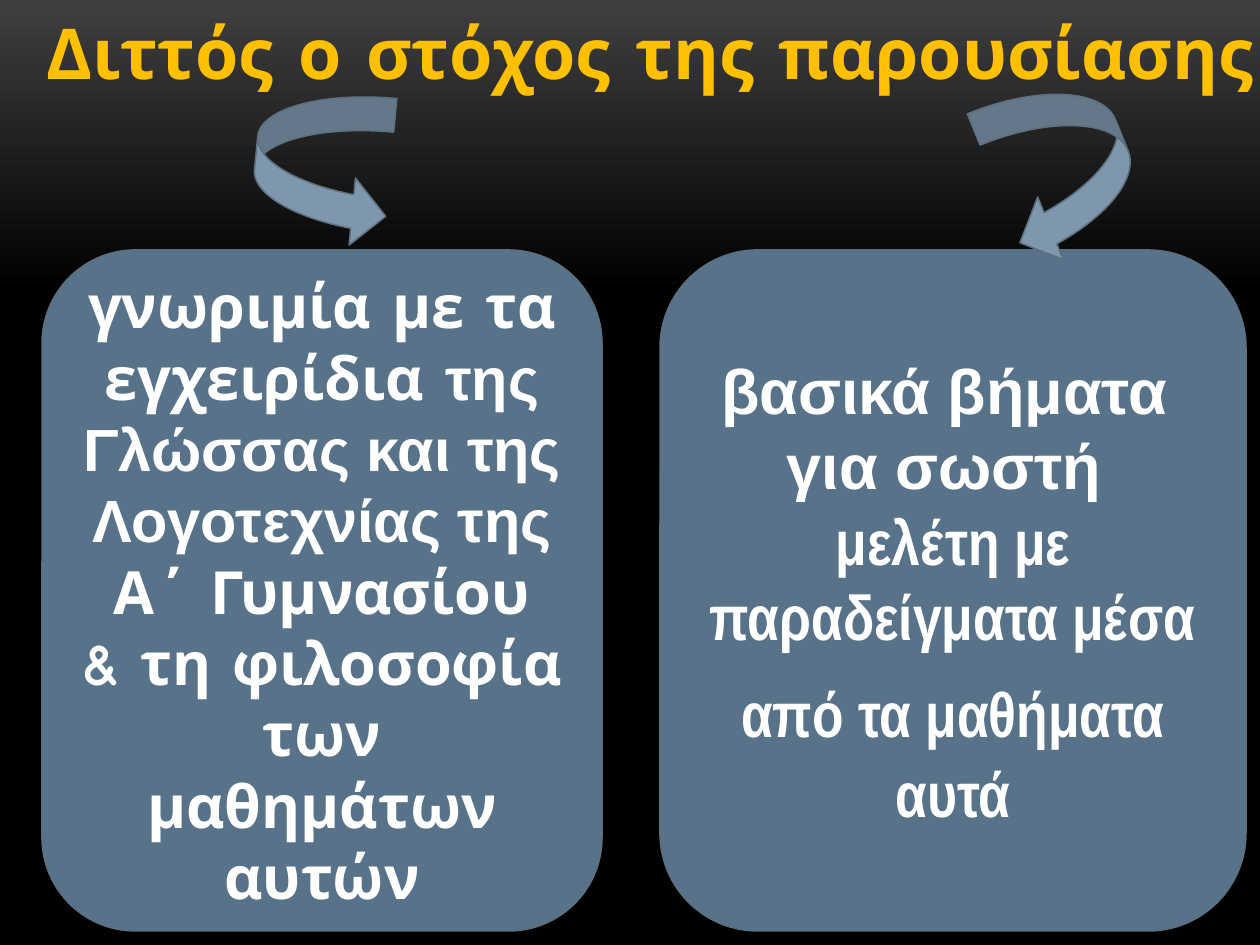
from dataclasses import dataclass

from pptx import Presentation
from pptx.dml.color import RGBColor
from pptx.enum.shapes import MSO_SHAPE
from pptx.enum.text import MSO_ANCHOR, MSO_AUTO_SIZE, PP_ALIGN
from pptx.util import Emu, Pt

EMU_PER_PX = 914400 / 126


@dataclass(frozen=True)
class Theme:
    title: str = "FFC000"
    text: str = "FFFFFF"
    card: str = "577289"
    arrow: str = "7E97AD"
    outline: str = "5D7080"
    glow: str = "3F3F3F"
    backdrop: str = "000000"
    heading_font: str = "Comic Neue"
    body_font: str = "Arial"
    narrow_font: str = "Arial Narrow"
    title_size: int = 40
    textbooks_size: int = 34
    study_size: int = 36
    gap_size: int = 48
    outline_width: float = 0.85


THEME = Theme()

TITLE = "Διττός ο στόχος της παρουσίασης"
TITLE_BOX = (20, 3, 1260, 107)

# Each paragraph is a list of (text, font, size) runs.
TEXTBOOKS_GOAL = [
    [("γνωριμία με τα εγχειρίδια ", THEME.heading_font, THEME.textbooks_size),
     ("της Γλώσσας και της Λογοτεχνίας της", THEME.body_font, THEME.textbooks_size),
     (" Α΄ Γυμνασίου", THEME.heading_font, THEME.textbooks_size)],
    [("& τη φιλοσοφία των μαθημάτων αυτών", THEME.heading_font, THEME.textbooks_size)],
]
STUDY_GOAL = [
    [("βασικά βήματα  για σωστή ", THEME.body_font, THEME.study_size),
     (" μελέτη με παραδείγματα μέσα από τα μαθήματα", THEME.narrow_font, THEME.study_size),
     (" ", THEME.narrow_font, THEME.gap_size),
     ("αυτά", THEME.narrow_font, THEME.study_size)],
]

CARD_TOP, CARD_HEIGHT = 250, 681
TEXTBOOKS_CARD = (42, CARD_TOP, 560, CARD_HEIGHT)
STUDY_CARD = (660, CARD_TOP, 586, CARD_HEIGHT)
TEXTBOOKS_ARROW = (255, 92, 135, 152)
STUDY_ARROW = (995, 82, 135, 173)


def px(length):
    return Emu(round(length * EMU_PER_PX))


def rgb(value):
    return RGBColor.from_string(value)


def paint_background(slide):
    """Fade from grey at the top to black a third of the way down."""
    fill = slide.background.fill
    fill.gradient()
    fill.gradient_angle = 270
    for stop, color, position in zip(
            fill.gradient_stops, (THEME.glow, THEME.backdrop), (0, 0.31)):
        stop.color.rgb = rgb(color)
        stop.position = position


def set_title(slide):
    title = slide.shapes.title
    title.left, title.top, title.width, title.height = map(px, TITLE_BOX)
    frame = title.text_frame
    frame.text = TITLE
    frame.word_wrap = True
    frame.auto_size = MSO_AUTO_SIZE.NONE
    frame.vertical_anchor = MSO_ANCHOR.TOP
    heading = frame.paragraphs[0]
    heading.alignment = PP_ALIGN.CENTER
    heading.font.name = THEME.heading_font
    heading.font.size = Pt(THEME.title_size)
    heading.font.bold = True
    heading.font.color.rgb = rgb(THEME.title)


def add_outlined(slide, preset, box, color):
    shape = slide.shapes.add_shape(preset, *map(px, box))
    shape.shadow.inherit = False
    shape.fill.solid()
    shape.fill.fore_color.rgb = rgb(color)
    shape.line.color.rgb = rgb(THEME.outline)
    shape.line.width = Pt(THEME.outline_width)
    return shape


def add_arrow(slide, preset, box, rotation):
    add_outlined(slide, preset, box, THEME.arrow).rotation = rotation


def add_card(slide, box, goal):
    frame = add_outlined(slide, MSO_SHAPE.ROUNDED_RECTANGLE, box, THEME.card).text_frame
    frame.word_wrap = True
    frame.vertical_anchor = MSO_ANCHOR.MIDDLE
    for index, runs in enumerate(goal):
        paragraph = frame.add_paragraph() if index else frame.paragraphs[0]
        paragraph.alignment = PP_ALIGN.CENTER
        paragraph.font.bold = True
        paragraph.font.color.rgb = rgb(THEME.text)
        for text, font, size in runs:
            run = paragraph.add_run()
            run.text = text
            run.font.name = font
            run.font.size = Pt(size)


def main():
    deck = Presentation()
    deck.slide_width, deck.slide_height = px(1260), px(945)
    slide = deck.slides.add_slide(deck.slide_layouts[5])
    paint_background(slide)
    set_title(slide)
    add_arrow(slide, MSO_SHAPE.CURVED_RIGHT_ARROW, TEXTBOOKS_ARROW, 5.4)
    add_card(slide, TEXTBOOKS_CARD, TEXTBOOKS_GOAL)
    add_card(slide, STUDY_CARD, STUDY_GOAL)
    add_arrow(slide, MSO_SHAPE.CURVED_LEFT_ARROW, STUDY_ARROW, 337.8)
    deck.save("out.pptx")


if __name__ == "__main__":
    main()
